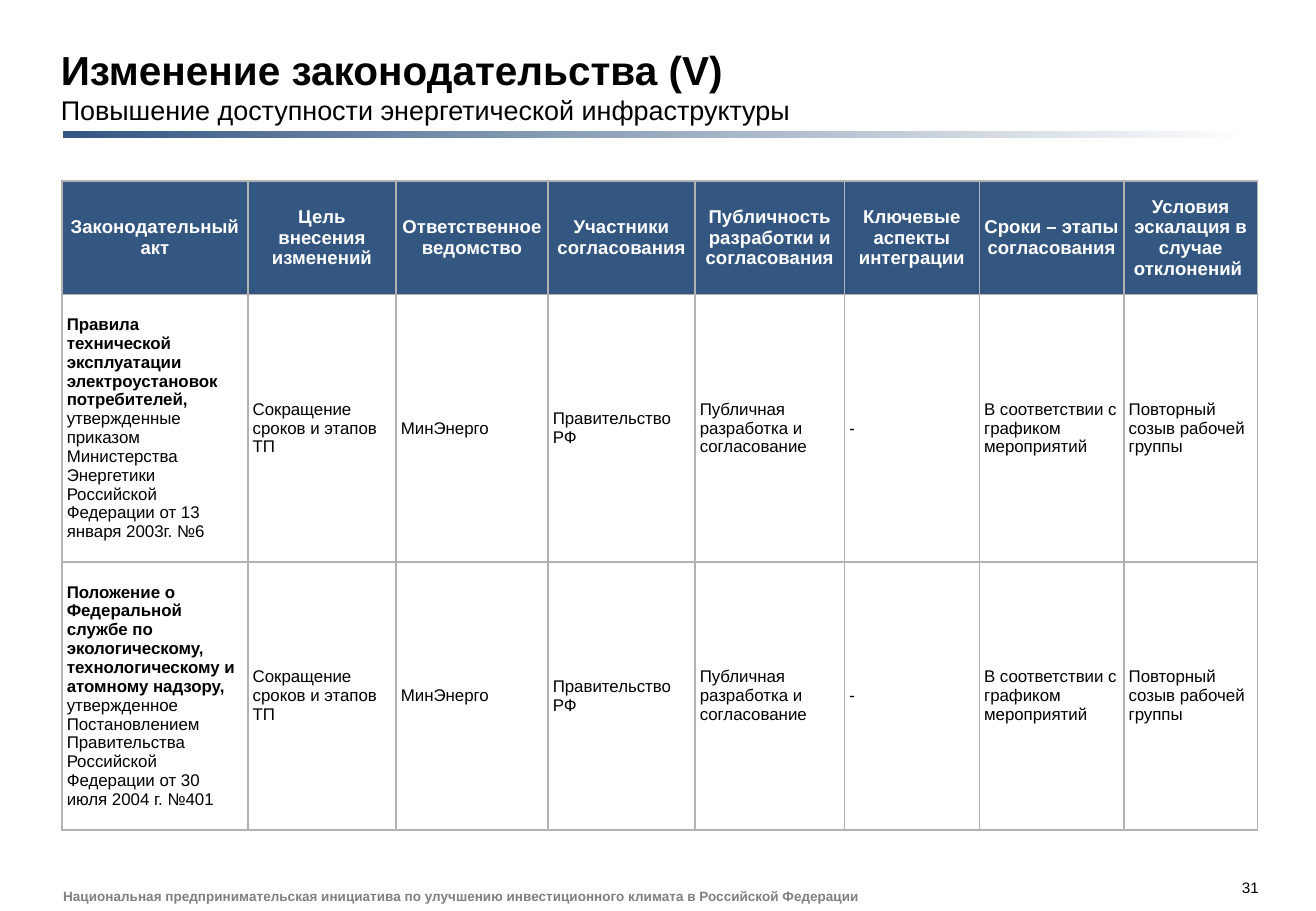
from dataclasses import dataclass

from lxml.etree import SubElement
from pptx import Presentation
from pptx.dml.color import RGBColor
from pptx.enum.shapes import MSO_SHAPE
from pptx.enum.text import MSO_ANCHOR, MSO_AUTO_SIZE, PP_ALIGN
from pptx.oxml.ns import qn
from pptx.util import Inches, Pt


@dataclass(frozen=True)
class Theme:
    font: str = "Arial"
    navy: RGBColor = RGBColor(0x34, 0x57, 0x82)
    white: RGBColor = RGBColor(0xFF, 0xFF, 0xFF)
    black: RGBColor = RGBColor(0, 0, 0)
    gray: RGBColor = RGBColor(0x80, 0x80, 0x80)
    border: str = "B2B2B2"
    title_size: int = 24
    subtitle_size: int = 16
    header_size: int = 11
    body_size: int = 10
    number_size: int = 9
    footer_size: int = 8


@dataclass(frozen=True)
class Column:
    heading: str
    width: float
    content: str = ""


@dataclass(frozen=True)
class LegalAct:
    name: str
    approval: str


@dataclass(frozen=True)
class Label:
    text: str
    left: float
    top: float
    width: float
    height: float
    size: int
    color: RGBColor
    bold: bool
    alignment: PP_ALIGN
    anchor: MSO_ANCHOR


THEME = Theme()

# The act column differs by row; the other columns repeat their content
COLUMNS = [
    Column("Законодательный акт", 1.53),
    Column("Цель внесения изменений", 1.22, "Сокращение сроков и этапов ТП"),
    Column("Ответственное ведомство", 1.25, "МинЭнерго"),
    Column("Участники согласования", 1.21, "Правительство РФ"),
    Column("Публичность разработки и согласования", 1.23,
           "Публичная разработка и согласование"),
    Column("Ключевые аспекты интеграции", 1.11, "-"),
    Column("Сроки – этапы согласования", 1.19,
           "В соответствии с графиком мероприятий"),
    Column("Условия эскалация в случае отклонений ", 1.1,
           "Повторный созыв рабочей группы"),
]
ACTS = [
    LegalAct("Правила технической эксплуатации электроустановок потребителей,",
             " утвержденные приказом Министерства Энергетики Российской "
             "Федерации от 13 января 2003г. №6"),
    LegalAct("Положение о Федеральной службе по экологическому, "
             "технологическому и атомному надзору,",
             " утвержденное Постановлением Правительства Российской "
             "Федерации от 30 июля 2004 г. №401"),
]
HEADER_HEIGHT, ACT_HEIGHT = 0.93, 2.2

LABELS = [
    Label("31", 10.15, 7.23, 0.21, 0.14, THEME.number_size, THEME.black,
          False, PP_ALIGN.RIGHT, MSO_ANCHOR.TOP),
    Label("Национальная предпринимательская инициатива по улучшению "
          "инвестиционного климата в Российской Федерации",
          0.52, 7.31, 6.61, 0.13, THEME.footer_size, THEME.gray,
          True, PP_ALIGN.LEFT, MSO_ANCHOR.MIDDLE),
]


def style_font(font, size: int, color: RGBColor, bold: bool) -> None:
    font.name = THEME.font
    font.size = Pt(size)
    font.color.rgb = color
    font.bold = bold


def add_title(slide, title: str, subtitle: str) -> None:
    shape = slide.shapes.title
    shape.left, shape.top = Inches(0.5), Inches(0.18)
    shape.width, shape.height = Inches(9.83), Inches(0.91)
    frame = shape.text_frame
    frame.auto_size = MSO_AUTO_SIZE.NONE
    frame.vertical_anchor = MSO_ANCHOR.BOTTOM
    frame.margin_left = frame.margin_right = 0
    frame.margin_top = frame.margin_bottom = Inches(0.05)
    paragraph = frame.paragraphs[0]
    paragraph.alignment = PP_ALIGN.LEFT
    title_run = paragraph.add_run()
    title_run.text = title
    style_font(title_run.font, THEME.title_size, THEME.black, True)
    paragraph.add_line_break()
    subtitle_run = paragraph.add_run()
    subtitle_run.text = subtitle
    style_font(subtitle_run.font, THEME.subtitle_size, THEME.black, False)


def add_title_rule(slide) -> None:
    rule = slide.shapes.add_shape(MSO_SHAPE.RECTANGLE, Inches(0.52),
                                  Inches(1.08), Inches(9.8), Inches(0.06))
    rule.shadow.inherit = False
    rule.line.fill.background()
    rule.fill.gradient()
    rule.fill.gradient_angle = 0
    for stop, color, position in zip(rule.fill.gradient_stops,
                                     (THEME.navy, THEME.white), (0, 1)):
        stop.color.rgb = color
        stop.position = position


def add_label(slide, label: Label) -> None:
    box = slide.shapes.add_textbox(Inches(label.left), Inches(label.top),
                                   Inches(label.width), Inches(label.height))
    frame = box.text_frame
    frame.word_wrap = False
    frame.vertical_anchor = label.anchor
    frame.margin_left = frame.margin_right = 0
    frame.margin_top = frame.margin_bottom = 0
    paragraph = frame.paragraphs[0]
    paragraph.text = label.text
    paragraph.alignment = label.alignment
    style_font(paragraph.font, label.size, label.color, label.bold)


def add_borders(cell) -> None:
    properties = cell._tc.get_or_add_tcPr()
    for side in ("a:lnL", "a:lnR", "a:lnT", "a:lnB"):
        line = SubElement(properties, qn(side), w=str(Pt(1)))
        fill = SubElement(line, qn("a:solidFill"))
        SubElement(fill, qn("a:srgbClr"), val=THEME.border)


def format_cell(cell):
    """Set borders, margins and anchor; return the cell's paragraph."""
    add_borders(cell)
    cell.vertical_anchor = MSO_ANCHOR.MIDDLE
    cell.margin_left = cell.margin_right = Inches(0.04)
    cell.margin_top = cell.margin_bottom = Inches(0.1)
    return cell.text_frame.paragraphs[0]


def fill_header(cell, heading: str) -> None:
    paragraph = format_cell(cell)
    cell.fill.solid()
    cell.fill.fore_color.rgb = THEME.navy
    paragraph.text = heading
    paragraph.alignment = PP_ALIGN.CENTER
    style_font(paragraph.font, THEME.header_size, THEME.white, True)


def fill_body(cell, bold_text: str, plain_text: str) -> None:
    paragraph = format_cell(cell)
    cell.fill.background()
    style_font(paragraph.font, THEME.body_size, THEME.black, False)
    for text, bold in ((bold_text, True), (plain_text, False)):
        if text:
            run = paragraph.add_run()
            run.text = text
            run.font.bold = bold


def add_acts_table(slide) -> None:
    heights = [HEADER_HEIGHT] + [ACT_HEIGHT] * len(ACTS)
    width = sum(column.width for column in COLUMNS)
    table = slide.shapes.add_table(len(heights), len(COLUMNS), Inches(0.51),
                                   Inches(1.49), Inches(width),
                                   Inches(sum(heights))).table
    table.first_row = table.horz_banding = False
    for row, height in zip(table.rows, heights):
        row.height = Inches(height)
    for index, column in enumerate(COLUMNS):
        table.columns[index].width = Inches(column.width)
        fill_header(table.cell(0, index), column.heading)
        for row_index, act in enumerate(ACTS, start=1):
            texts = ("", column.content) if index else (act.name, act.approval)
            fill_body(table.cell(row_index, index), *texts)


def main() -> None:
    presentation = Presentation()
    presentation.slide_width = Inches(10.83)
    presentation.slide_height = Inches(7.5)
    slide = presentation.slides.add_slide(presentation.slide_layouts[5])
    add_title_rule(slide)
    for label in LABELS:
        add_label(slide, label)
    add_acts_table(slide)
    add_title(slide, "Изменение законодательства (V)",
              "Повышение доступности энергетической инфраструктуры")
    presentation.save("out.pptx")


if __name__ == "__main__":
    main()
